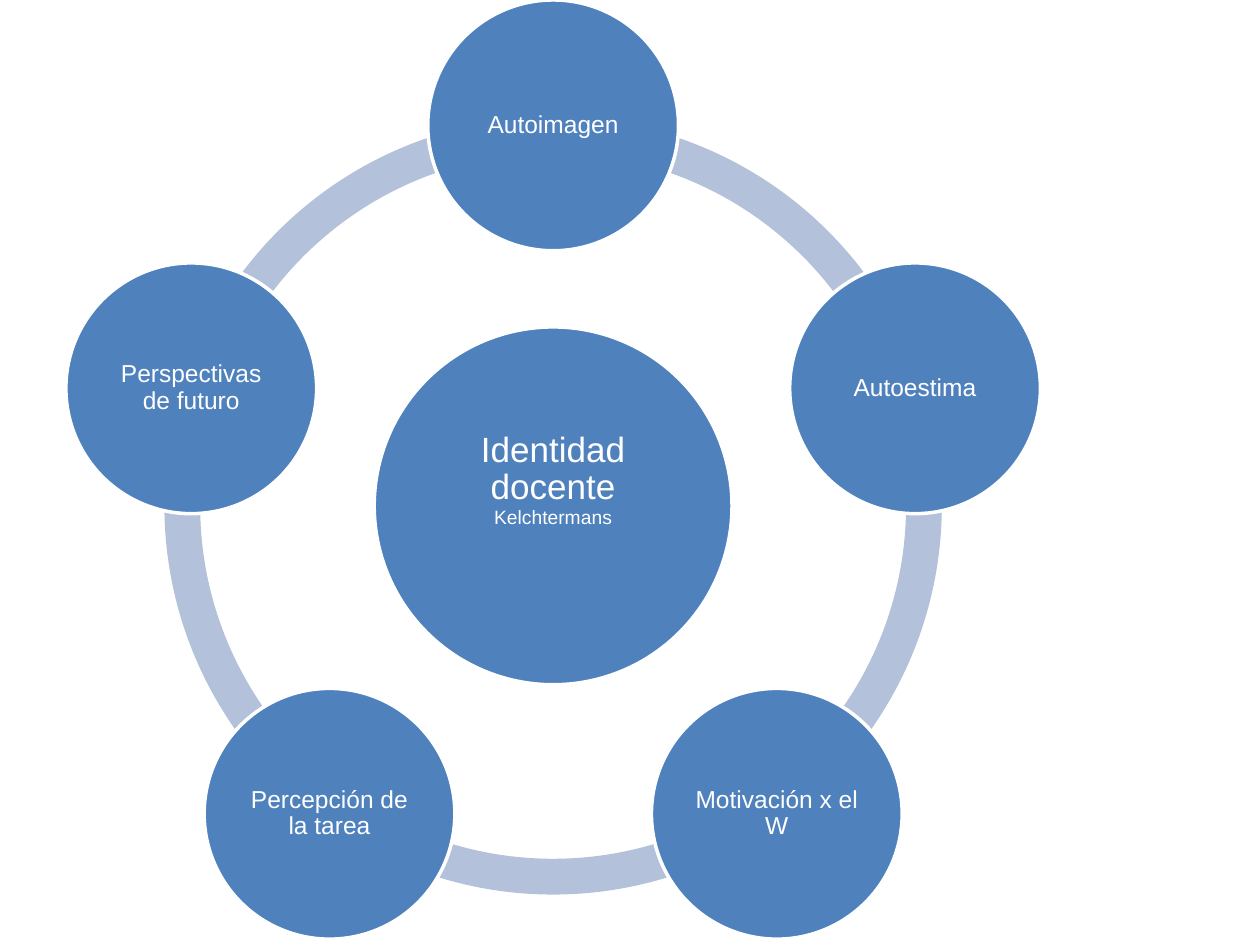
from math import cos, radians, sin

from pptx import Presentation
from pptx.dml.color import RGBColor
from pptx.enum.shapes import MSO_SHAPE
from pptx.enum.text import MSO_ANCHOR, PP_ALIGN
from pptx.util import Inches, Pt

ARC, CIRCLE = MSO_SHAPE.BLOCK_ARC, MSO_SHAPE.OVAL
MIDDLE, CENTER = MSO_ANCHOR.MIDDLE, PP_ALIGN.CENTER

COLORS = {"circle": "4F81BD", "ring": "B3C1DB", "white": "FFFFFF"}
TOPICS = ["Autoimagen", "Autoestima", "Motivación x el W",
          "Percepción de la tarea", "Perspectivas de futuro"]

# Sizes in inches, as parts of the box that holds the cycle
HUB_SIZE = 2.84
TOPIC_SIZE = 1.99
RING_SIZE = 6.17
ORBIT = 3.02
RING_THICKNESS = 0.046
STEP = 360 / len(TOPICS)


def color(name):
    return RGBColor.from_string(COLORS[name])


def add_centered(page, kind, x, y, size, fill):
    """Add a square-bounded shape centred on x, y."""
    shape = page.shapes.add_shape(kind, Inches(x - size / 2), Inches(y - size / 2),
                                  Inches(size), Inches(size))
    shape.shadow.inherit = False
    shape.fill.solid()
    shape.fill.fore_color.rgb = color(fill)
    shape.line.fill.background()
    return shape


def add_circle(page, x, y, size, spans, inset, bottom_inset):
    """Add a white-edged circle; spans are (text, point size) pairs."""
    circle = add_centered(page, CIRCLE, x, y, size, "circle")
    circle.line.color.rgb = color("white")
    circle.line.width = Pt(2)

    frame = circle.text_frame
    frame_format = {
        "word_wrap": True, "vertical_anchor": MIDDLE,
        "margin_left": Inches(inset), "margin_right": Inches(inset),
        "margin_top": Inches(inset), "margin_bottom": Inches(bottom_inset),
    }
    for name, value in frame_format.items():
        setattr(frame, name, value)

    para = frame.paragraphs[0]
    para.alignment = CENTER
    para.line_spacing = 0.9
    for text, points in spans:
        span = para.add_run()
        span.text = text
        for name, value in {"name": "Arial", "size": Pt(points)}.items():
            setattr(span.font, name, value)
        span.font.color.rgb = color("white")


def add_cycle(page, left, top, width, height):
    """Place the ring, the hub and the topics around the hub in the given box."""
    x = left + width / 2
    y = top + TOPIC_SIZE / 2 + ORBIT
    angles = [270 + STEP * index for index in range(len(TOPICS))]

    # Ring segments between neighbouring topics
    for angle in angles:
        arc = add_centered(page, ARC, x, y, RING_SIZE, "ring")
        # Angles are stored in 60000ths of a degree, adjustments in 100000ths
        arc.adjustments[0] = angle % 360 * 0.6
        arc.adjustments[1] = (angle + STEP) % 360 * 0.6
        arc.adjustments[2] = RING_THICKNESS

    # Hub, with its text raised by a deeper bottom inset
    add_circle(page, x, y, HUB_SIZE,
               [("Identidad docente ", 20), ("Kelchtermans", 11)], 0.03, 0.44)

    # Topics, clockwise from the top
    for angle, topic in zip(angles, TOPICS):
        add_circle(page, x + ORBIT * cos(radians(angle)),
                   y + ORBIT * sin(radians(angle)),
                   TOPIC_SIZE, [(topic, 14)], 0.02, 0.02)


def main():
    deck = Presentation()
    deck.slide_width, deck.slide_height = Inches(10), Inches(7.5)
    page = deck.slides.add_slide(deck.slide_layouts[6])
    add_cycle(page, 0.53, 0, 7.72, 7.5)
    deck.save("out.pptx")


if __name__ == "__main__":
    main()
